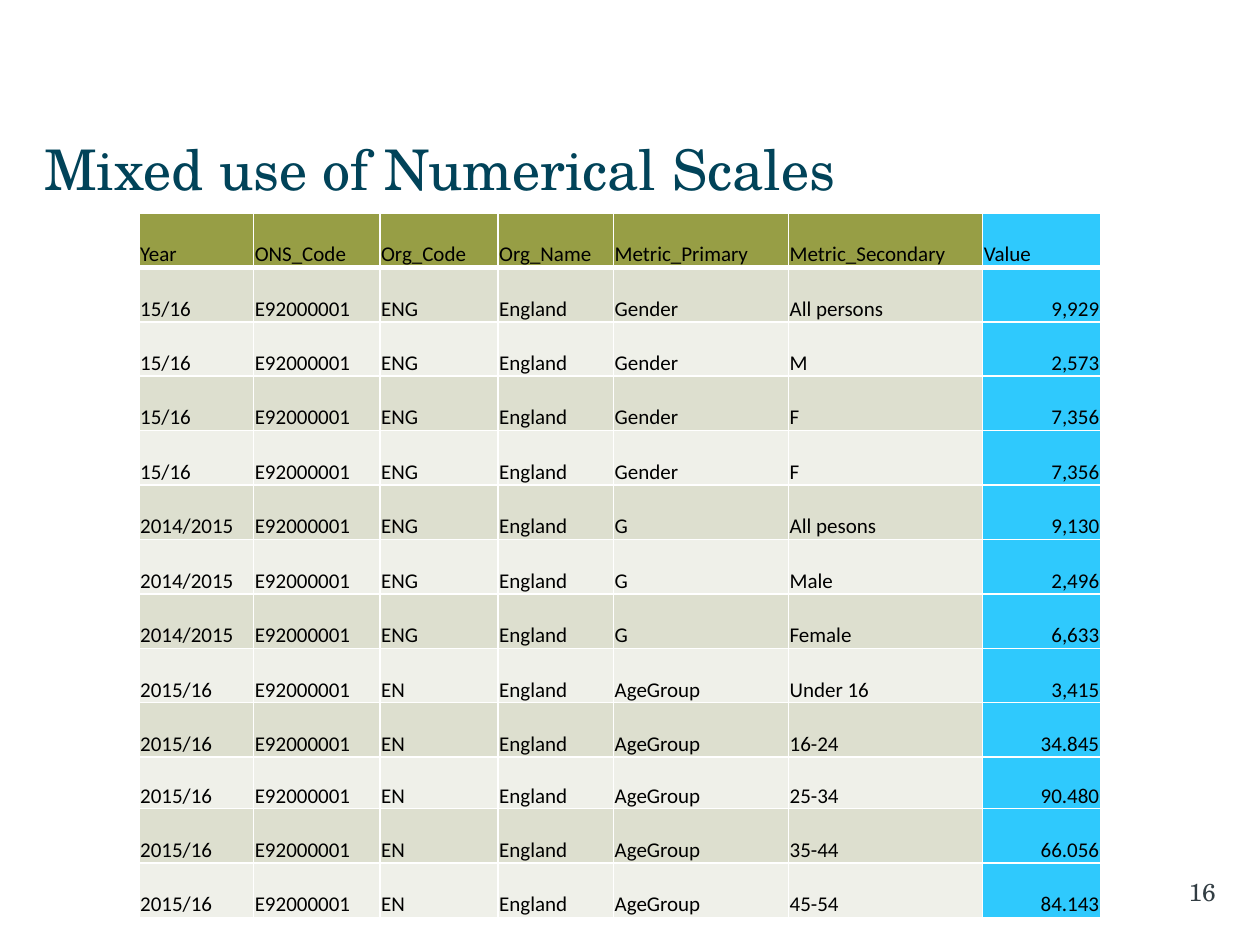
from lxml import etree
from pptx import Presentation
from pptx.dml.color import RGBColor
from pptx.enum.text import MSO_ANCHOR, PP_ALIGN
from pptx.oxml.ns import qn
from pptx.util import Pt

LEFT, RIGHT = PP_ALIGN.LEFT, PP_ALIGN.RIGHT
MIDDLE, BOTTOM = MSO_ANCHOR.MIDDLE, MSO_ANCHOR.BOTTOM
SERIF, SANS = "TeX Gyre Schola", "Calibri"
HUES = {
    "title": "014359", "page": "323D43", "text": "000000", "rule": "FFFFFF",
    "head": "979E45", "odd": "DDDFCF", "even": "EFF0E9", "value": "2FC9FD",
}
HEADS = ["Year", "ONS_Code", "Org_Code", "Org_Name",
         "Metric_Primary", "Metric_Secondary", "Value"]
GROUPS = [
    ("15/16", "ENG", "Gender", [
        ("All persons", "9,929"), ("M", "2,573"), ("F", "7,356"), ("F", "7,356")]),
    ("2014/2015", "ENG", "G", [
        ("All pesons", "9,130"), ("Male", "2,496"), ("Female", "6,633")]),
    ("2015/16", "EN", "AgeGroup", [
        ("Under 16", "3,415"), ("16-24", "34.845"), ("25-34", "90.480"),
        ("35-44", "66.056"), ("45-54", "84.143")]),
]
ROWS = [HEADS] + [
    [year, "E92000001", org, "England", metric, name, value]
    for year, org, metric, items in GROUPS
    for name, value in items
]
WIDTHS = [65.5, 72.2, 67.5, 66, 100, 111, 67.3]
HEIGHTS = [31.1] * 10 + [29.5] + [31.1] * 2


class Deck:
    """Holds the style and the current slide."""

    def __init__(self):
        self.file = Presentation()
        self.file.slide_width, self.file.slide_height = Pt(720), Pt(540)
        self.slide = self.file.slides.add_slide(self.file.slide_layouts[5])

    def text(self, frame, words, font, size, hue, align=LEFT):
        line = frame.paragraphs[0]
        line.alignment = align
        run = line.add_run()
        run.text = words
        run.font.name, run.font.size = font, Pt(size)
        run.font.color.rgb = RGBColor.from_string(HUES[hue])

    def inset(self, item, left, top, right, bottom):
        item.margin_left, item.margin_top = Pt(left), Pt(top)
        item.margin_right, item.margin_bottom = Pt(right), Pt(bottom)

    def title(self, words, left, top, width, height):
        shape = self.slide.shapes.title
        shape.left, shape.top = Pt(left), Pt(top)
        shape.width, shape.height = Pt(width), Pt(height)
        frame = shape.text_frame
        frame.word_wrap, frame.vertical_anchor = True, MIDDLE
        self.inset(frame, 0, 3.6, 7.2, 3.6)
        self.text(frame, words, SERIF, 32, "title")

    def page(self, words, left, top, width, height):
        box = self.slide.shapes.add_textbox(Pt(left), Pt(top), Pt(width), Pt(height))
        frame = box.text_frame
        frame.word_wrap, frame.vertical_anchor = True, MIDDLE
        self.inset(frame, 7.2, 3.6, 0, 3.6)
        self.text(frame, words, SERIF, 14, "page", RIGHT)

    def border(self, cell, row):
        props = cell._tc.get_or_add_tcPr()
        for side in "LRTB":
            thick = (row, side) in ((0, "B"), (1, "T"))
            line = etree.SubElement(props, qn(f"a:ln{side}"), w=str(Pt(3 if thick else 1)))
            fill = etree.SubElement(line, qn("a:solidFill"))
            etree.SubElement(fill, qn("a:srgbClr"), val=HUES["rule"])

    def cell(self, cell, words, row, last):
        cell.vertical_anchor = BOTTOM
        self.inset(cell, 0.72, 0.72, 0.72, 0)
        self.border(cell, row)
        band = "head" if row == 0 else "odd" if row % 2 else "even"
        cell.fill.solid()
        cell.fill.fore_color.rgb = RGBColor.from_string(HUES["value" if last else band])
        align = RIGHT if last and row else LEFT
        self.text(cell.text_frame, words, SANS, 12, "text", align)

    def table(self, rows, left, top, widths, heights):
        table = self.slide.shapes.add_table(
            len(rows), len(widths), Pt(left), Pt(top),
            Pt(sum(widths)), Pt(sum(heights))).table
        for col, width in zip(table.columns, widths):
            col.width = Pt(width)
        for line, height in zip(table.rows, heights):
            line.height = Pt(height)
        for r, row in enumerate(rows):
            for c, words in enumerate(row):
                self.cell(table.cell(r, c), words, r, c == len(row) - 1)


def main():
    deck = Deck()
    deck.page("16", 556.5, 497.5, 138.3, 24.5)
    deck.table(ROWS, 79.4, 121.7, WIDTHS, HEIGHTS)
    deck.title("Mixed use of Numerical Scales", 25.2, 70.6, 669, 51)
    deck.file.save("out.pptx")


if __name__ == "__main__":
    main()
